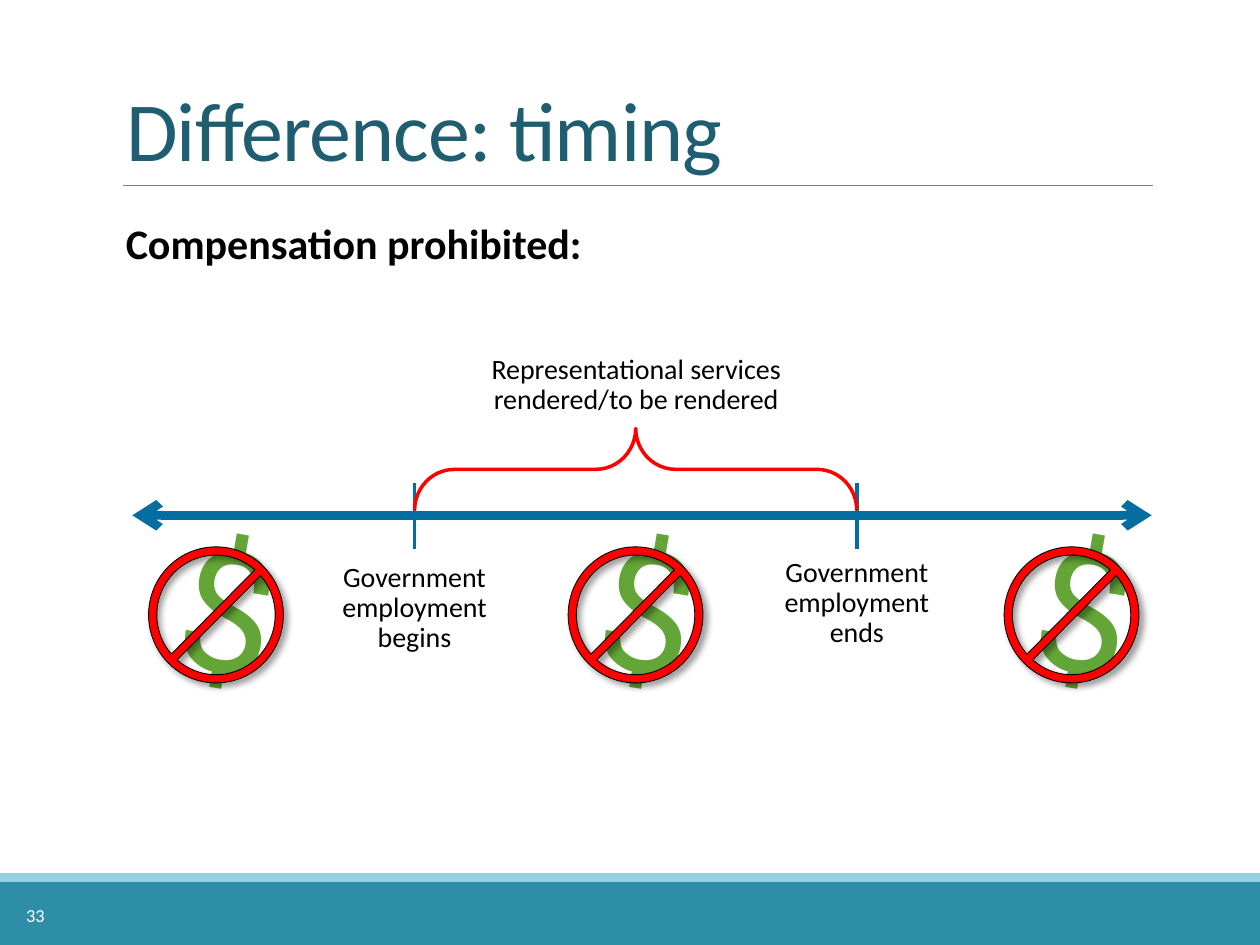
from lxml import etree
from pptx import Presentation
from pptx.dml.color import RGBColor
from pptx.enum.shapes import MSO_CONNECTOR, MSO_SHAPE
from pptx.enum.text import MSO_ANCHOR, MSO_AUTO_SIZE, PP_ALIGN
from pptx.oxml import parse_xml
from pptx.oxml.ns import qn
from pptx.util import Inches, Pt

STRAIGHT = MSO_CONNECTOR.STRAIGHT
RECTANGLE, BRACE, NO_SIGN = MSO_SHAPE.RECTANGLE, MSO_SHAPE.LEFT_BRACE, MSO_SHAPE.NO_SYMBOL
LEFT, CENTER = PP_ALIGN.LEFT, PP_ALIGN.CENTER
TOP, MIDDLE, BOTTOM = MSO_ANCHOR.TOP, MSO_ANCHOR.MIDDLE, MSO_ANCHOR.BOTTOM
NO_FIT = MSO_AUTO_SIZE.NONE

SHADOW = (
    '<a:outerShdw xmlns:a="http://schemas.openxmlformats.org/drawingml/2006/main" '
    'blurRad="50800" dist="38100" dir="2700000" algn="tl" rotWithShape="0">'
    '<a:srgbClr val="000000"><a:alpha val="40000"/></a:srgbClr></a:outerShdw>'
)


def color(value):
    return RGBColor.from_string(value)


def write(shape, text, size, value, font="Calibri", bold=False, align=LEFT,
          spacing=1.0, anchor=TOP, wrap=True):
    frame = shape.text_frame
    frame.word_wrap = wrap
    frame.auto_size = NO_FIT
    frame.vertical_anchor = anchor
    paragraph = frame.paragraphs[0]
    paragraph.alignment = align
    paragraph.line_spacing = spacing
    run = paragraph.add_run()
    run.text = text
    run.font.name = font
    run.font.size = Pt(size)
    run.font.bold = bold
    run.font.color.rgb = color(value)
    return run


presentation = Presentation()
presentation.slide_width = Inches(10)
presentation.slide_height = Inches(7.5)
slide = presentation.slides.add_slide(presentation.slide_layouts[5])
shapes = slide.shapes

title = shapes.title
title.left, title.top = Inches(0.9), Inches(0.31)
title.width, title.height = Inches(8.25), Inches(1.16)
title_run = write(title, "Difference: timing", 48, "1E5E70", spacing=0.85, anchor=BOTTOM)
title_run.font._element.set("spc", "-50")

for top, height, fill in [(7, 0.5, "2E8EA8"), (6.93, 0.07, "95D1E2")]:
    band = shapes.add_shape(RECTANGLE, 0, Inches(top), Inches(10), Inches(height))
    band.shadow.inherit = False
    band.fill.solid()
    band.fill.fore_color.rgb = color(fill)
    band.line.fill.background()

slide_number = shapes.add_textbox(Inches(0.11), Inches(7.06), Inches(1.08), Inches(0.4))
write(slide_number, "33", 10.5, "FFFFFF", anchor=MIDDLE)

begin_x, end_x = 3.29, 6.8
lines = [
    (0.98, 1.47, 9.15, 1.47, "808080", 0.5, False),
    (1.05, 4.09, 9.14, 4.09, "056EA0", 5, True),
    (begin_x, 3.83, begin_x, 4.36, "056EA0", 2, False),
    (end_x, 3.83, end_x, 4.36, "056EA0", 2, False),
]
for x1, y1, x2, y2, stroke, width, arrows in lines:
    line = shapes.add_connector(STRAIGHT, Inches(x1), Inches(y1), Inches(x2), Inches(y2))
    line.line.color.rgb = color(stroke)
    line.line.width = Pt(width)
    properties = line._element.spPr
    if arrows:
        for end in ("a:headEnd", "a:tailEnd"):
            etree.SubElement(properties.find(qn("a:ln")), qn(end), type="arrow")
    etree.SubElement(properties, qn("a:effectLst"))

heading = shapes.add_textbox(Inches(0.9), Inches(1.68), Inches(4.54), Inches(0.5))
write(heading, "Compensation prohibited:", 24, "000000", bold=True)

labels = [
    (2.4, 4.42, 1.78, 0.83, "Government employment begins"),
    (5.94, 4.38, 1.72, 0.83, "Government employment ends"),
    (3.62, 2.77, 2.86, 0.59, "Representational services rendered/to be rendered"),
]
for left, top, width, height, text in labels:
    label = shapes.add_textbox(Inches(left), Inches(top), Inches(width), Inches(height))
    write(label, text, 16, "000000", align=CENTER, spacing=0.9)

brace = shapes.add_shape(BRACE, Inches(4.72), Inches(1.97), Inches(0.65), Inches(end_x - begin_x))
brace.rotation = 90
brace.adjustments[0] = 0.487
brace.adjustments[1] = 0.5
brace.shadow.inherit = False
brace.fill.background()
brace.line.color.rgb = color("FF0000")
brace.line.width = Pt(2)

for left in (1.18, 7.97, 4.51):
    group = shapes.add_group_shape()
    dollar = group.shapes.add_textbox(Inches(left + 0.17), Inches(3.94), Inches(0.76), Inches(1.72))
    dollar.rotation = 9.7
    write(dollar, "$", 96, "63A537", font="Roboto", wrap=False)

    sign = group.shapes.add_shape(NO_SIGN, Inches(left), Inches(4.34), Inches(1.07), Inches(1.08))
    sign.adjustments[0] = 0.061
    sign.fill.solid()
    sign.fill.fore_color.rgb = color("FF0000")
    sign.line.color.rgb = color("000000")
    sign.line.width = Pt(0.5)
    sign.shadow.inherit = False
    properties = sign._element.spPr
    properties.find(qn("a:xfrm")).set("flipH", "1")
    properties.find(qn("a:effectLst")).append(parse_xml(SHADOW))

presentation.save("out.pptx")
